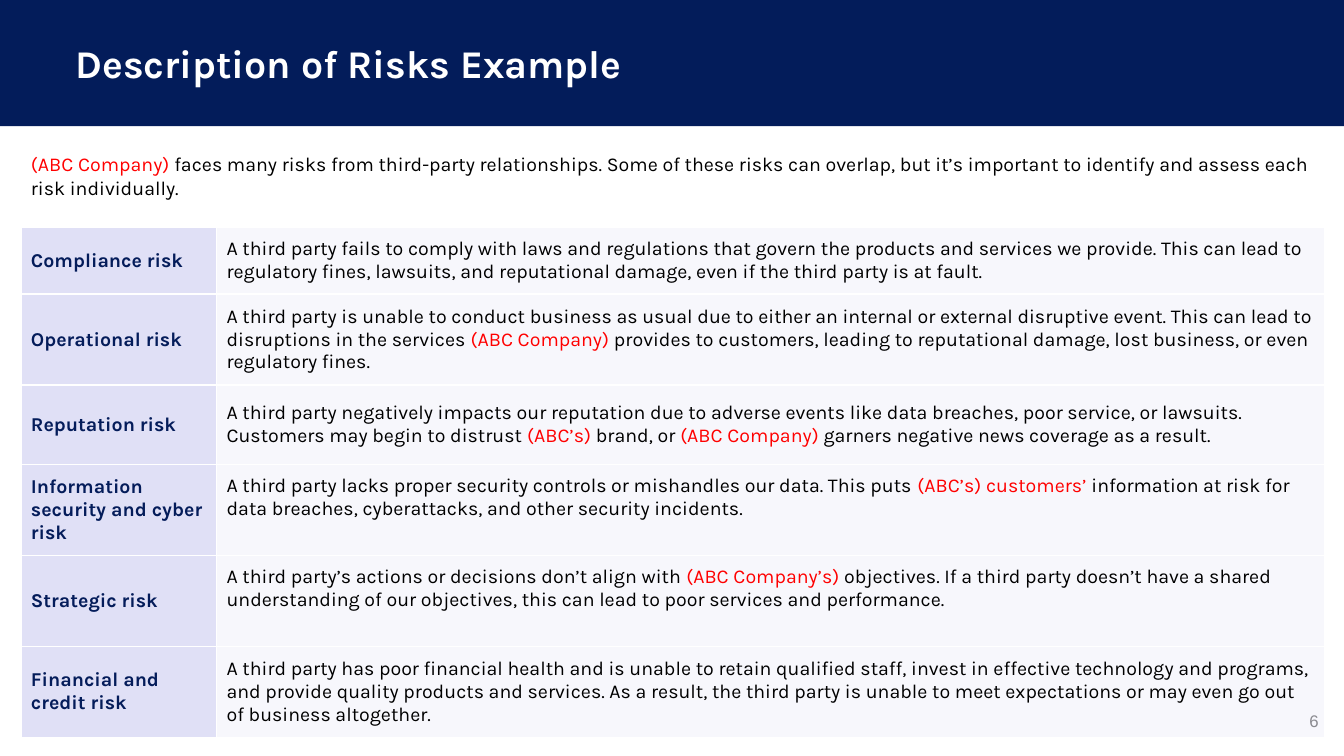
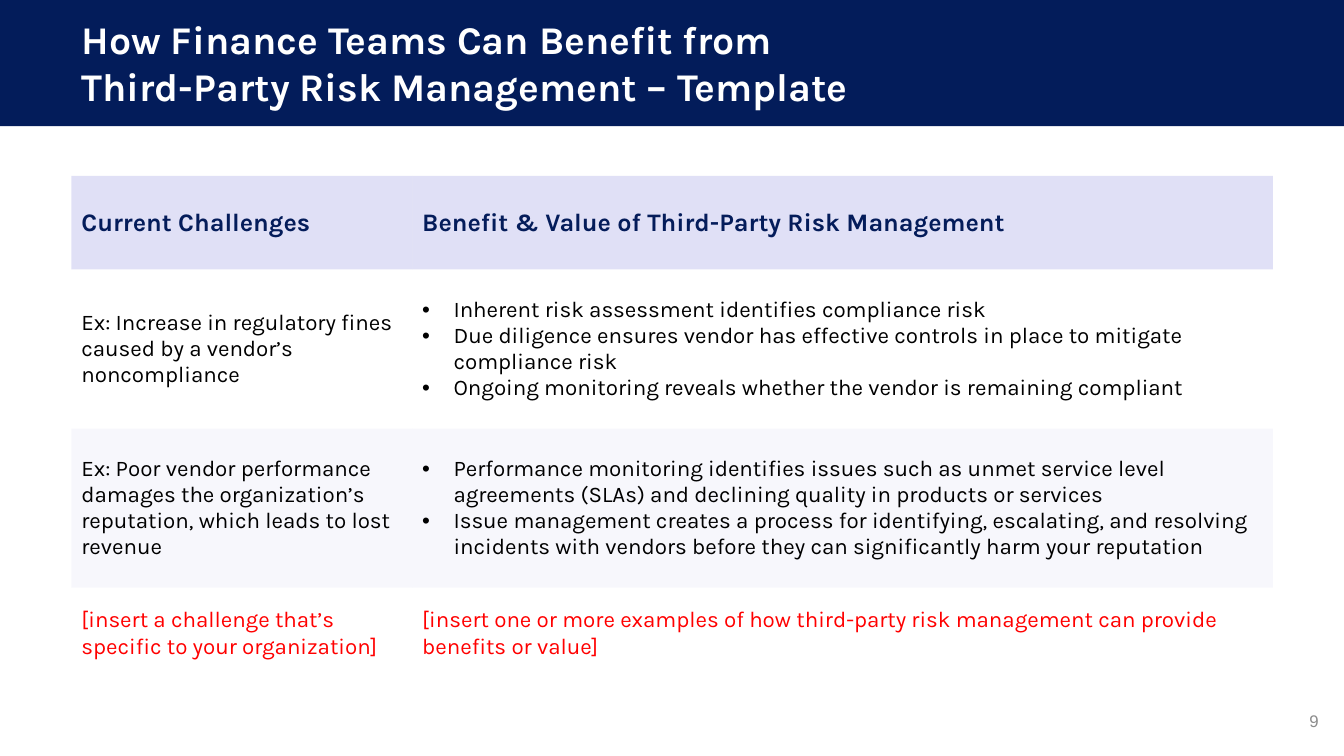
from lxml import etree
from pptx import Presentation
from pptx.dml.color import RGBColor
from pptx.enum.shapes import MSO_SHAPE
from pptx.enum.text import MSO_ANCHOR, MSO_AUTO_SIZE, PP_ALIGN
from pptx.oxml.ns import qn
from pptx.util import Cm, Pt

RECT = MSO_SHAPE.RECTANGLE
TOP, MID = MSO_ANCHOR.TOP, MSO_ANCHOR.MIDDLE
LEFT, RIGHT = PP_ALIGN.LEFT, PP_ALIGN.RIGHT
FIXED = MSO_AUTO_SIZE.NONE
HUES = {"band": "031C5A", "head": "041C5A", "tint": "6666D2", "white": "FFFFFF",
        "ink": "000000", "red": "FF0000", "page": "8C8C8C"}
WIDE, TALL = 33.87, 19.05
BAND = (0, 0, WIDE, 3.18)
FOOT = (25.86, 17.65, 7.62, 1.02)
DARK, PALE = 20, 5
PAD = 0.25
BULLET = 0.79

RISKS = [
    ("Compliance risk", 1.69, MID,
     "A third party fails to comply with laws and regulations that govern the products and "
     "services we provide. This can lead to regulatory fines, lawsuits, and reputational "
     "damage, even if the third party is at fault."),
    ("Operational risk", 2.29, MID,
     "A third party is unable to conduct business as usual due to either an internal or "
     "external disruptive event. This can lead to disruptions in the services "
     "|(ABC Company) |provides to customers, leading to reputational damage, lost business, "
     "or even regulatory fines."),
    ("Reputation risk", 2.01, MID,
     "A third party negatively impacts our reputation due to adverse events like data "
     "breaches, poor service, or lawsuits. Customers may begin to distrust |(ABC’s) |brand, "
     "or |(ABC Company) |garners negative news coverage as a result."),
    ("Information security and cyber risk", 2.29, TOP,
     "A third party lacks proper security controls or mishandles our data. This puts "
     "|(ABC’s) customers’| information at risk for data breaches, cyberattacks, and other "
     "security incidents."),
    ("Strategic risk", 2.29, TOP,
     "A third party’s actions or decisions don’t align with |(ABC Company’s) |objectives. "
     "If a third party doesn’t have a shared understanding of our objectives, this can lead "
     "to poor services and performance."),
    ("Financial and credit risk", 2.29, MID,
     "A third party has poor financial health and is unable to retain qualified staff, "
     "invest in effective technology and programs, and provide quality products and "
     "services. As a result, the third party is unable to meet expectations or may even go "
     "out of business altogether."),
]

GAINS = [
    ("Ex: Increase in regulatory fines caused by a vendor’s noncompliance", 4.01, 0,
     ["Inherent risk assessment identifies compliance risk",
      "Due diligence ensures vendor has effective controls in place to mitigate compliance risk",
      "Ongoing monitoring reveals whether the vendor is remaining compliant"]),
    ("Ex: Poor vendor performance damages the organization’s reputation, which leads to lost "
     "revenue", 4.01, PALE,
     ["Performance monitoring identifies issues such as unmet service level agreements (SLAs) "
      "and declining quality in products or services",
      "Issue management creates a process for identifying, escalating, and resolving incidents "
      "with vendors before they can significantly harm your reputation"]),
    ("|[insert a challenge that’s specific to your organization]", 2.31, 0,
     ["|[insert one or more examples of how third-party risk management can provide benefits "
      "or value]"]),
]


def rgb(name):
    """Return the named colour."""
    return RGBColor.from_string(HUES[name])


def put(frame, lines, size=14, hue="ink", bold=False, font="Karla", align=LEFT, dots=False):
    """Write lines into a frame, with every second |-separated part in red."""
    for num, line in enumerate(lines):
        para = frame.add_paragraph() if num else frame.paragraphs[0]
        para.alignment = align
        for pos, part in enumerate(line.split("|")):
            if part:
                run = para.add_run()
                run.text = part
                run.font.size, run.font.name, run.font.bold = Pt(size), font, bold
                run.font.color.rgb = rgb("red" if pos % 2 else hue)
        if dots:
            props = para._p.get_or_add_pPr()
            props.set("marL", str(Cm(BULLET)))
            props.set("indent", str(-Cm(BULLET)))
            etree.SubElement(props, qn("a:buFont"), typeface="Arial")
            etree.SubElement(props, qn("a:buChar"), char="•")


def label(slide, box, lines, anchor=TOP, **form):
    """Add a wrapped text box."""
    frame = slide.shapes.add_textbox(*map(Cm, box)).text_frame
    frame.word_wrap = True
    frame.vertical_anchor = anchor
    put(frame, lines, **form)


def base(deck, box, lines, page):
    """Add a slide with its band, title and page number."""
    slide = deck.slides.add_slide(deck.slide_layouts[5])
    band = slide.shapes.add_shape(RECT, *map(Cm, BAND))
    band.shadow.inherit = False
    band.fill.solid()
    band.fill.fore_color.rgb = rgb("band")
    band.line.fill.background()
    title = slide.shapes.title
    title._element.addprevious(band._element)
    title.left, title.top, title.width, title.height = map(Cm, box)
    frame = title.text_frame
    frame.word_wrap = True
    frame.auto_size = FIXED
    frame.vertical_anchor = TOP
    put(frame, lines, size=28, hue="white", bold=True)
    label(slide, FOOT, [page], anchor=MID, size=12, hue="page", font="Arial", align=RIGHT)
    return slide


def grid(slide, box, cols, rows):
    """Add a plain table with the given column widths and row heights."""
    left, top = box
    table = slide.shapes.add_table(len(rows), len(cols), Cm(left), Cm(top),
                                   Cm(sum(cols)), Cm(sum(rows))).table
    table.first_row = table.horz_banding = False
    for col, width in zip(table.columns, cols):
        col.width = Cm(width)
    for row, height in zip(table.rows, rows):
        row.height = Cm(height)
    return table


def fill(cell, lines, tint, anchor=MID, edge=False, pad=PAD, **form):
    """Set the text, tint in percent and borders of a cell."""
    cell.vertical_anchor = anchor
    cell.margin_left = cell.margin_right = Cm(PAD)
    cell.margin_top = cell.margin_bottom = Cm(pad)
    props = cell._tc.get_or_add_tcPr()
    if tint:
        cell.fill.solid()
        cell.fill.fore_color.rgb = rgb("tint")
        tone = props.find(".//" + qn("a:srgbClr"))
        etree.SubElement(tone, qn("a:alpha"), val=str(tint * 1000))
    else:
        cell.fill.background()
    for pos, side in enumerate("LRTB"):
        line = etree.Element(qn("a:ln" + side), w=str(Pt(1)))
        if edge:
            ink = etree.SubElement(line, qn("a:solidFill"))
            etree.SubElement(ink, qn("a:srgbClr"), val=HUES["white"])
        else:
            etree.SubElement(line, qn("a:noFill"))
        props.insert(pos, line)
    put(cell.text_frame, lines, **form)


def risks(slide, box):
    """Place the table of risks."""
    table = grid(slide, box, [4.93, 27.91], [risk[1] for risk in RISKS])
    for num, (name, _, anchor, text) in enumerate(RISKS):
        fill(table.cell(num, 0), [name], DARK, edge=True, hue="head", bold=True)
        fill(table.cell(num, 1), [text], PALE, anchor=anchor, edge=True)


def gains(slide, box):
    """Place the table of challenges and benefits."""
    table = grid(slide, box, [8.59, 21.69], [2.36] + [gain[1] for gain in GAINS])
    heads = ["Current Challenges", "Benefit & Value of Third-Party Risk Management"]
    for col, head in enumerate(heads):
        fill(table.cell(0, col), [head], DARK, pad=0.13, size=18, hue="head", bold=True)
    for num, (need, _, tint, lines) in enumerate(GAINS, 1):
        fill(table.cell(num, 0), [need], tint, size=16)
        fill(table.cell(num, 1), lines, tint, size=16, dots=len(lines) > 1)


def main():
    """Build and save the deck."""
    deck = Presentation()
    deck.slide_width, deck.slide_height = Cm(WIDE), Cm(TALL)
    slide = base(deck, (1.65, 0.86, 15.24, 1.45), ["Description of Risks Example"], "6")
    label(slide, (0.53, 3.71, 32.82, 1.45),
          ["|(ABC Company) |faces many risks from third-party relationships. Some of these "
           "risks can overlap, but it’s important to identify and assess each risk "
           "individually."])
    risks(slide, (0.53, 5.72))
    slide = base(deck, (1.8, 0.25, 25.58, 2.64),
                 ["How Finance Teams Can Benefit from",
                  "Third-Party Risk Management – Template"], "9")
    gains(slide, (1.8, 4.43))
    deck.save("out.pptx")


if __name__ == "__main__":
    main()
